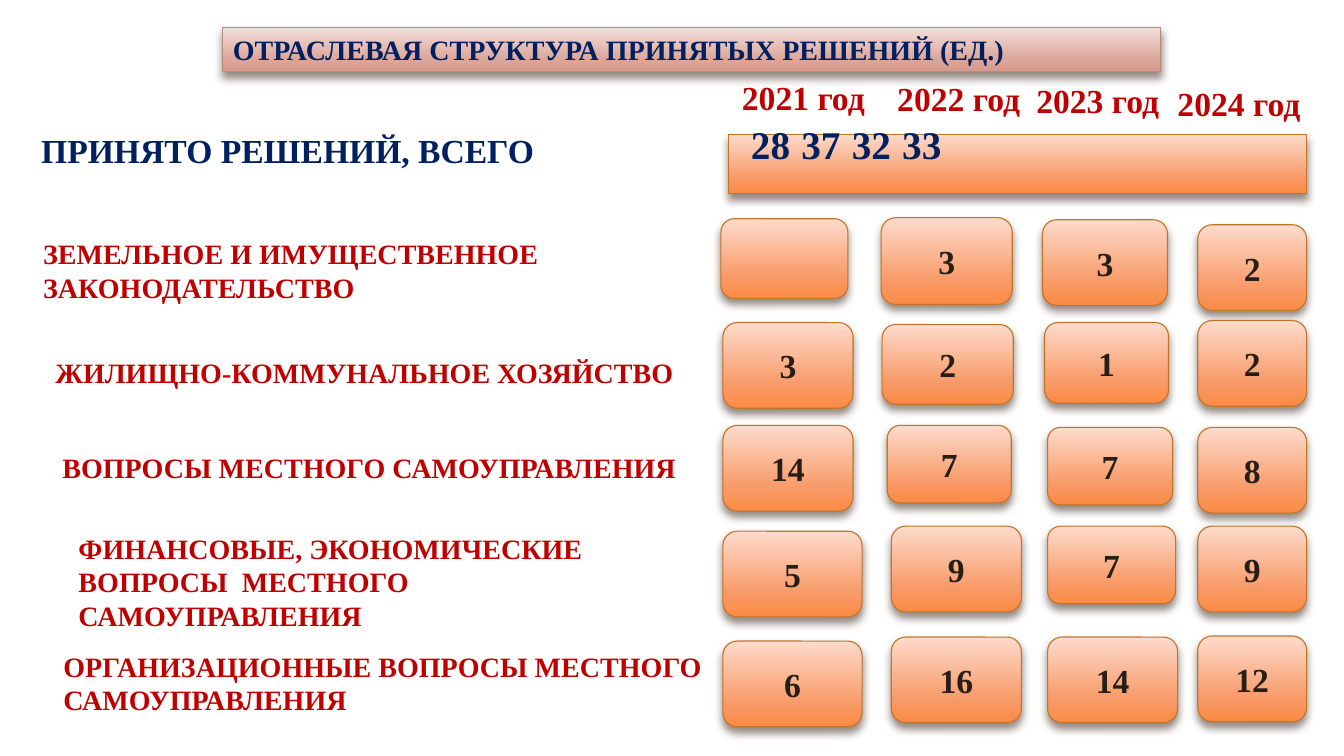
from copy import deepcopy

from lxml import etree
from pptx import Presentation
from pptx.dml.color import RGBColor
from pptx.enum import shapes, text
from pptx.oxml import ns
from pptx.util import Inches, Pt

FONT = "Times New Roman"
NAVY = RGBColor(0x00, 0x20, 0x60)
RED = RGBColor(0xC0, 0x00, 0x00)
DARK = RGBColor(0x27, 0x1E, 0x18)
SHADOW = RGBColor(0x4E, 0x3B, 0x30)
ORANGE_LINE = RGBColor(0xC1, 0x75, 0x29)
ROSE_LINE = RGBColor(0xB5, 0x8B, 0x80)
ORANGE = [RGBColor(0xFD, 0xDB, 0xCC), RGBColor(0xF8, 0x9B, 0x69), RGBColor(0xFC, 0x8A, 0x43)]
ROSE = [RGBColor(0xF3, 0xE0, 0xDB), RGBColor(0xDC, 0xA7, 0x9B), RGBColor(0xD8, 0x97, 0x87)]
GRADIENT_POSITIONS = [0, 0.72, 1]

TITLE = "ОТРАСЛЕВАЯ СТРУКТУРА ПРИНЯТЫХ РЕШЕНИЙ (ЕД.)"
TITLE_BOX = (2.21, 0.27, 9.3, 0.44)

TOTAL_LABEL = ("ПРИНЯТО РЕШЕНИЙ, ВСЕГО", (0.31, 1.24, 6.39, 0.5))
TOTALS = ["28", "37", "32", "33"]
TOTAL_BOX = (7.23, 1.33, 5.73, 0.59)
TOTAL_STARTS = [0.12, 1.67, 3.23, 4.88]

YEARS = [
    ("2021 год", (7.26, 0.71, 1.48, 0.5)),
    ("2022 год", (8.8, 0.72, 1.71, 0.5)),
    ("2023 год", (10.18, 0.74, 1.56, 0.5)),
    ("2024 год", (11.58, 0.77, 1.56, 0.5)),
]

SECTORS = [
    ("ЗЕМЕЛЬНОЕ И ИМУЩЕСТВЕННОЕ\nЗАКОНОДАТЕЛЬСТВО", (0.33, 2.3, 6.14, 0.77)),
    ("ЖИЛИЩНО-КОММУНАЛЬНОЕ ХОЗЯЙСТВО", (0.45, 3.48, 6.49, 0.44)),
    ("ВОПРОСЫ МЕСТНОГО САМОУПРАВЛЕНИЯ", (0.52, 4.42, 6.58, 0.44)),
    ("ФИНАНСОВЫЕ, ЭКОНОМИЧЕСКИЕ\vВОПРОСЫ  МЕСТНОГО\nСАМОУПРАВЛЕНИЯ", (0.68, 5.22, 6.42, 1.11)),
    ("ОРГАНИЗАЦИОННЫЕ ВОПРОСЫ МЕСТНОГО САМОУПРАВЛЕНИЯ", (0.53, 6.39, 6.62, 0.77)),
]

COUNTS = [
    ("", (7.15, 2.17, 1.26, 0.79)),
    ("3", (8.74, 2.16, 1.3, 0.86)),
    ("3", (10.34, 2.18, 1.24, 0.85)),
    ("2", (11.88, 2.23, 1.08, 0.85)),
    ("3", (7.17, 3.2, 1.29, 0.85)),
    ("2", (8.75, 3.22, 1.3, 0.79)),
    ("1", (10.36, 3.2, 1.23, 0.8)),
    ("2", (11.88, 3.18, 1.08, 0.85)),
    ("14", (7.17, 4.22, 1.29, 0.85)),
    ("7", (8.8, 4.22, 1.23, 0.77)),
    ("7", (10.39, 4.24, 1.24, 0.77)),
    ("8", (11.88, 4.24, 1.08, 0.85)),
    ("5", (7.17, 5.27, 1.38, 0.85)),
    ("9", (8.84, 5.22, 1.29, 0.85)),
    ("7", (10.39, 5.22, 1.27, 0.77)),
    ("9", (11.88, 5.22, 1.08, 0.85)),
    ("6", (7.17, 6.36, 1.38, 0.85)),
    ("16", (8.84, 6.32, 1.29, 0.85)),
    ("14", (10.39, 6.32, 1.29, 0.85)),
    ("12", (11.88, 6.31, 1.08, 0.85)),
]


def place(box):
    return [Inches(length) for length in box]


def write(shape, content, size, color, align=text.PP_ALIGN.LEFT, anchor=text.MSO_ANCHOR.TOP):
    frame = shape.text_frame
    frame.text = content
    frame.word_wrap = True
    frame.auto_size = text.MSO_AUTO_SIZE.NONE
    frame.vertical_anchor = anchor
    for paragraph in frame.paragraphs:
        paragraph.alignment = align
        for run in paragraph.runs:
            run.font.name = FONT
            run.font.size = Pt(size)
            run.font.bold = True
            run.font.color.rgb = color


def add_label(slide, content, box, size, color):
    write(slide.shapes.add_textbox(*place(box)), content, size, color)


def decorate(shape, colors, line_color):
    shape.fill.gradient()
    shape.fill.gradient_angle = 270
    stop_list = shape._element.spPr.find(".//" + ns.qn("a:gsLst"))
    stop_list.append(deepcopy(stop_list[-1]))
    for stop, color, position in zip(shape.fill.gradient_stops, colors, GRADIENT_POSITIONS):
        stop.color.rgb = color
        stop.position = position
    shape.line.color.rgb = line_color
    shape.line.width = Pt(0.79)
    shape.shadow.inherit = False
    effects = shape._element.spPr.find(ns.qn("a:effectLst"))
    shadow = etree.SubElement(effects, ns.qn("a:outerShdw"), blurRad=str(Pt(6)),
                              dist=str(Pt(4)), dir="5400000", algn="ctr", rotWithShape="0")
    tone = etree.SubElement(shadow, ns.qn("a:srgbClr"), val=str(SHADOW))
    etree.SubElement(tone, ns.qn("a:alpha"), val="60000")


def add_panel(slide, kind, box):
    shape = slide.shapes.add_shape(kind, *place(box))
    decorate(shape, ORANGE, ORANGE_LINE)
    return shape


def add_totals(slide):
    bar = add_panel(slide, shapes.MSO_SHAPE.RECTANGLE, TOTAL_BOX)
    write(bar, "\t".join(TOTALS), 28, NAVY, anchor=text.MSO_ANCHOR.MIDDLE)
    bar.text_frame.margin_bottom = Inches(0.45)
    properties = bar.text_frame.paragraphs[0]._p.get_or_add_pPr()
    properties.set("marL", str(Inches(TOTAL_STARTS[0])))
    properties.set("indent", "0")
    tabs = etree.SubElement(properties, ns.qn("a:tabLst"))
    for start in TOTAL_STARTS[1:]:
        etree.SubElement(tabs, ns.qn("a:tab"), pos=str(Inches(start)), algn="l")


def main():
    presentation = Presentation()
    presentation.slide_width = Inches(13.33)
    presentation.slide_height = Inches(7.5)
    slide = presentation.slides.add_slide(presentation.slide_layouts[5])

    title = slide.shapes.title
    title.left, title.top, title.width, title.height = place(TITLE_BOX)
    write(title, TITLE, 20, NAVY)
    decorate(title, ROSE, ROSE_LINE)

    for content, box in SECTORS:
        add_label(slide, content, box, 20, RED)
    for content, box in COUNTS:
        panel = add_panel(slide, shapes.MSO_SHAPE.ROUNDED_RECTANGLE, box)
        write(panel, content, 24, DARK, text.PP_ALIGN.CENTER, text.MSO_ANCHOR.MIDDLE)
    add_label(slide, *TOTAL_LABEL, 24, NAVY)
    add_totals(slide)
    for content, box in YEARS:
        add_label(slide, content, box, 24, RED)

    presentation.save("out.pptx")


if __name__ == "__main__":
    main()
